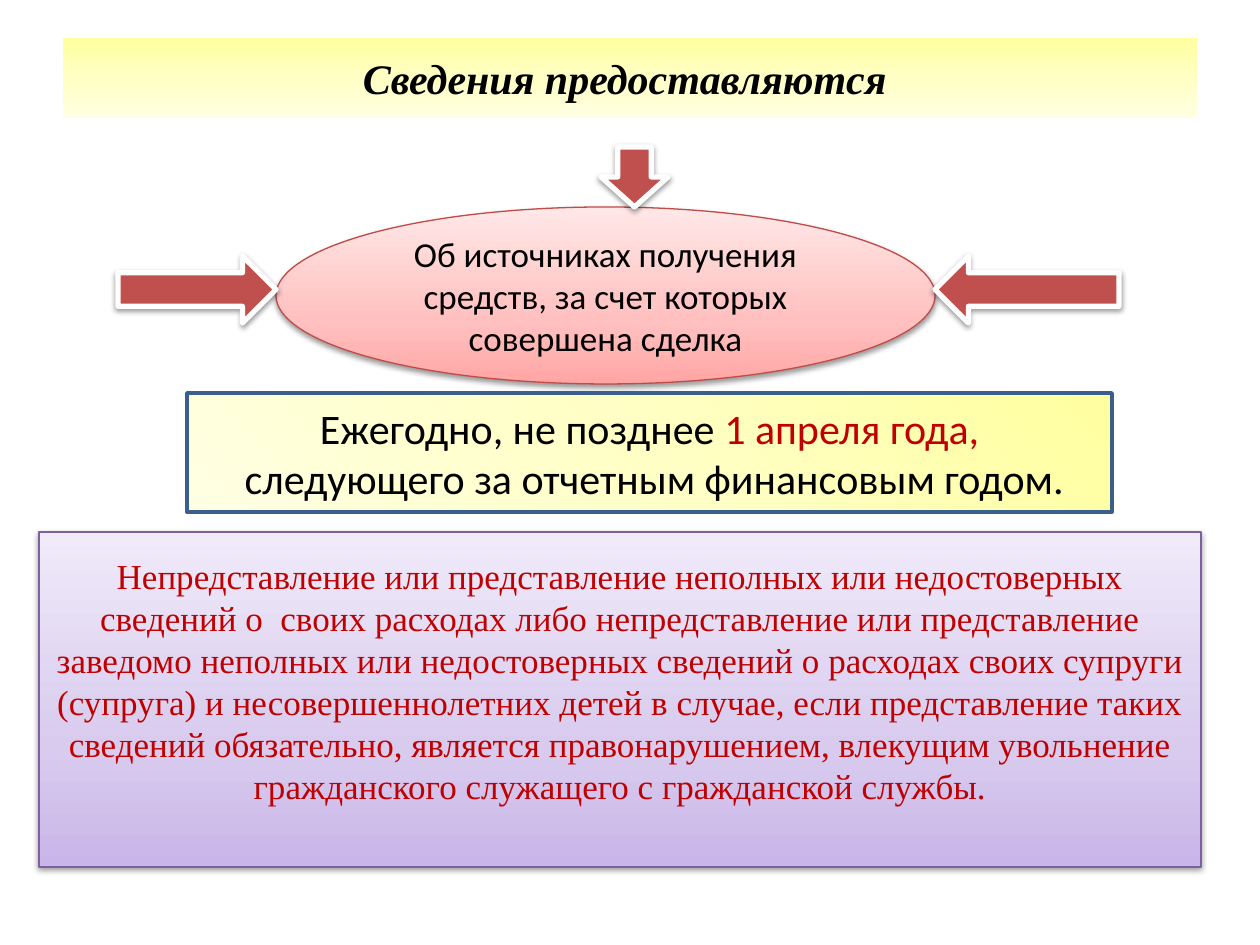
from dataclasses import dataclass

from lxml.etree import SubElement
from pptx import Presentation
from pptx.dml.color import RGBColor
from pptx.enum.shapes import MSO_SHAPE
from pptx.enum.text import MSO_ANCHOR, PP_ALIGN
from pptx.oxml.ns import qn
from pptx.util import Emu, Pt


@dataclass(frozen=True)
class Theme:
    black: str = "000000"
    red: str = "C00000"
    arrow: str = "C0504D"
    white: str = "FFFFFF"
    blue_line: str = "3A5F8C"
    red_line: str = "BF4C48"
    purple_line: str = "7D60A0"
    yellow: tuple = ((0, "FFFFA0"), (50, "FFFFC5"), (100, "FFFFE3"))
    pink: tuple = ((0, "FFA6A5"), (35, "FFC0BF"), (100, "FFE7E7"))
    purple: tuple = ((0, "C9B5E8"), (35, "D8CBEE"), (100, "F0EAF9"))
    sans: str = "Calibri"
    serif: str = "Times New Roman"
    large: int = 24
    medium: int = 20


THEME = Theme()
EMU_PER_PX = 914400 / 126
INSET = (13, 6)
WARNING_BOTTOM_INSET = 44

# Content: box = left, top, width, height in px; gradient angles run clockwise
TITLE = dict(
    kind=MSO_SHAPE.RECTANGLE, box=(63, 38, 1134, 80), fill=THEME.yellow, angle=90,
    font=THEME.serif, size=THEME.large, bold=True,
    paragraphs=[[("Сведения предоставляются ", THEME.black)]])
SOURCES = dict(
    kind=MSO_SHAPE.OVAL, box=(276, 207, 659, 177), fill=THEME.pink, angle=270,
    line=(THEME.red_line, 0.75), shadow=True, font=THEME.sans, size=THEME.medium,
    paragraphs=[[("Об источниках получения средств, за счет которых совершена сделка",
                  THEME.black)]])
DEADLINE = dict(
    kind=MSO_SHAPE.RECTANGLE, box=(187, 393, 925, 119), fill=THEME.yellow, angle=135,
    line=(THEME.blue_line, 2), font=THEME.sans, size=THEME.large,
    paragraphs=[[("Ежегодно, не позднее ", THEME.black), ("1 апреля года,", THEME.red)],
                [(" следующего за отчетным финансовым годом.", THEME.black)]])
WARNING = dict(
    kind=MSO_SHAPE.RECTANGLE, box=(39, 532, 1162, 335), fill=THEME.purple, angle=270,
    line=(THEME.purple_line, 0.75), shadow=True, font=THEME.serif, size=THEME.medium,
    bottom_inset=WARNING_BOTTOM_INSET,
    paragraphs=[[(
        "Непредставление или представление неполных или недостоверных сведений о  своих "
        "расходах либо непредставление или представление заведомо неполных или "
        "недостоверных сведений о расходах своих супруги (супруга) и несовершеннолетних "
        "детей в случае, если представление таких сведений обязательно, является "
        "правонарушением, влекущим увольнение гражданского служащего с гражданской "
        "службы.", THEME.red)]])
ARROWS = [
    (MSO_SHAPE.DOWN_ARROW, (601, 147, 67, 60)),
    (MSO_SHAPE.RIGHT_ARROW, (118, 256, 158, 67)),
    (MSO_SHAPE.LEFT_ARROW, (935, 256, 184, 67)),
]


def px(value):
    return Emu(round(value * EMU_PER_PX))


def set_gradient(shape, stops, angle):
    shape.fill.gradient()
    shape.fill.gradient_angle = 360 - angle
    stop_list = shape.element.spPr.find(".//" + qn("a:gsLst"))
    for old_stop in list(stop_list):
        stop_list.remove(old_stop)
    for position, color in stops:
        stop = SubElement(stop_list, qn("a:gs"), pos=str(position * 1000))
        SubElement(stop, qn("a:srgbClr"), val=color)


def add_shadow(shape):
    effects = shape.element.spPr.find(qn("a:effectLst"))
    shadow = SubElement(effects, qn("a:outerShdw"), blurRad=str(Pt(3.1)),
                        dist=str(Pt(1.6)), dir="5400000", rotWithShape="0")
    color = SubElement(shadow, qn("a:srgbClr"), val=THEME.black)
    SubElement(color, qn("a:alpha"), val="38000")


def add_text(shape, paragraphs, font, size, bold, bottom_inset):
    frame = shape.text_frame
    frame.word_wrap = True
    frame.vertical_anchor = MSO_ANCHOR.MIDDLE
    frame.margin_left = frame.margin_right = px(INSET[0])
    frame.margin_top, frame.margin_bottom = px(INSET[1]), px(bottom_inset)
    for index, runs in enumerate(paragraphs):
        paragraph = frame.add_paragraph() if index else frame.paragraphs[0]
        paragraph.alignment = PP_ALIGN.CENTER
        for text, color in runs:
            run = paragraph.add_run()
            run.text = text
            run.font.name, run.font.size = font, Pt(size)
            run.font.bold = run.font.italic = bold
            run.font.color.rgb = RGBColor.from_string(color)


def add_block(slide, kind, box, fill, angle=None, line=None, shadow=False,
              paragraphs=(), font=THEME.sans, size=THEME.medium, bold=False,
              bottom_inset=INSET[1]):
    shape = slide.shapes.add_shape(kind, *map(px, box))
    if angle is None:
        shape.fill.solid()
        shape.fill.fore_color.rgb = RGBColor.from_string(fill)
    else:
        set_gradient(shape, fill, angle)
    if line:
        shape.line.color.rgb = RGBColor.from_string(line[0])
        shape.line.width = Pt(line[1])
    else:
        shape.line.fill.background()
    shape.shadow.inherit = False
    if shadow:
        add_shadow(shape)
    if paragraphs:
        add_text(shape, paragraphs, font, size, bold, bottom_inset)


def main():
    presentation = Presentation()
    presentation.slide_width, presentation.slide_height = px(1260), px(945)
    slide = presentation.slides.add_slide(presentation.slide_layouts[6])

    # Heading and the ellipse the arrows point to
    add_block(slide, **TITLE)
    add_block(slide, **SOURCES)
    for kind, box in ARROWS:
        add_block(slide, kind, box, THEME.arrow, line=(THEME.white, 3), shadow=True)

    # Deadline and liability
    add_block(slide, **DEADLINE)
    add_block(slide, **WARNING)
    presentation.save("out.pptx")


if __name__ == "__main__":
    main()
